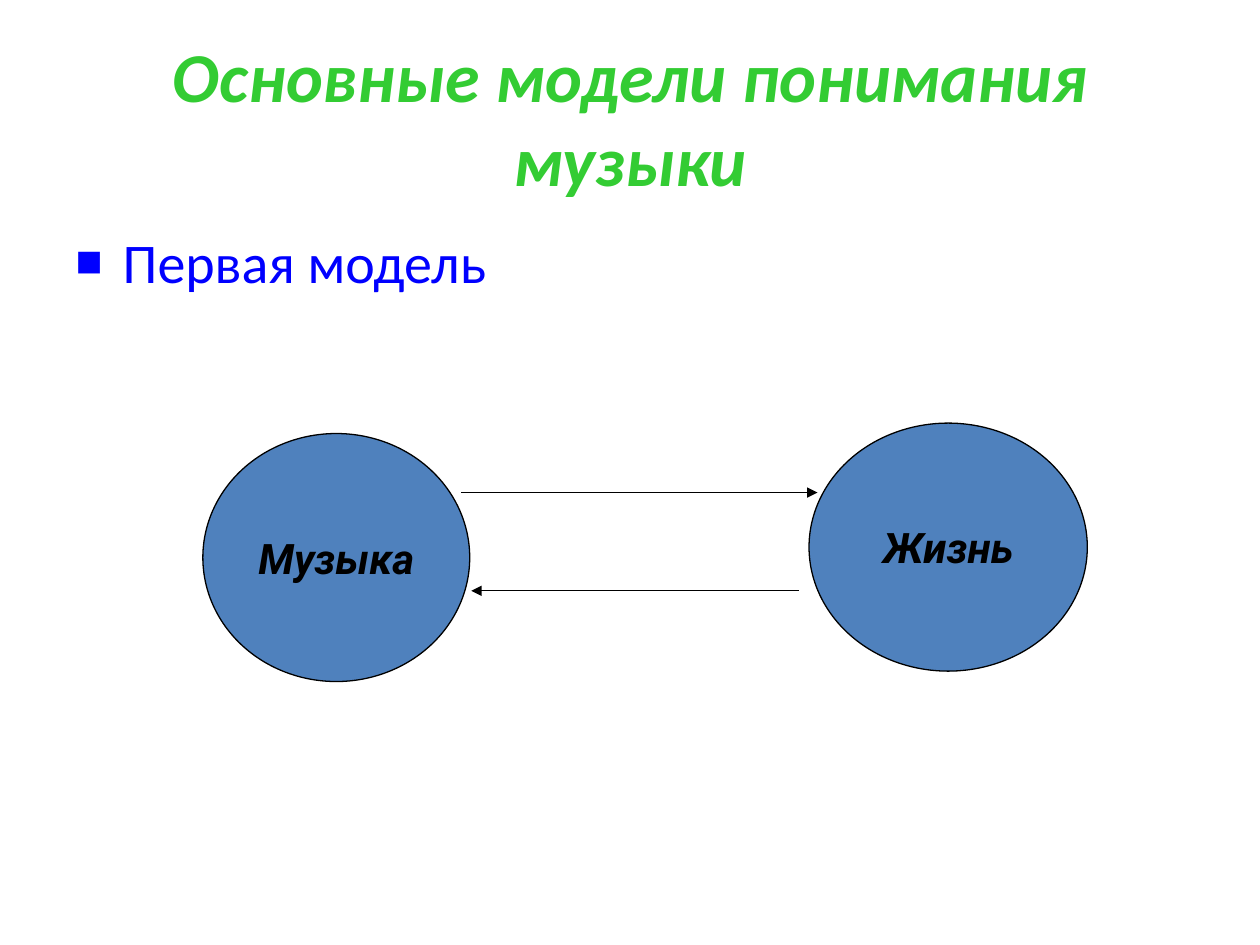
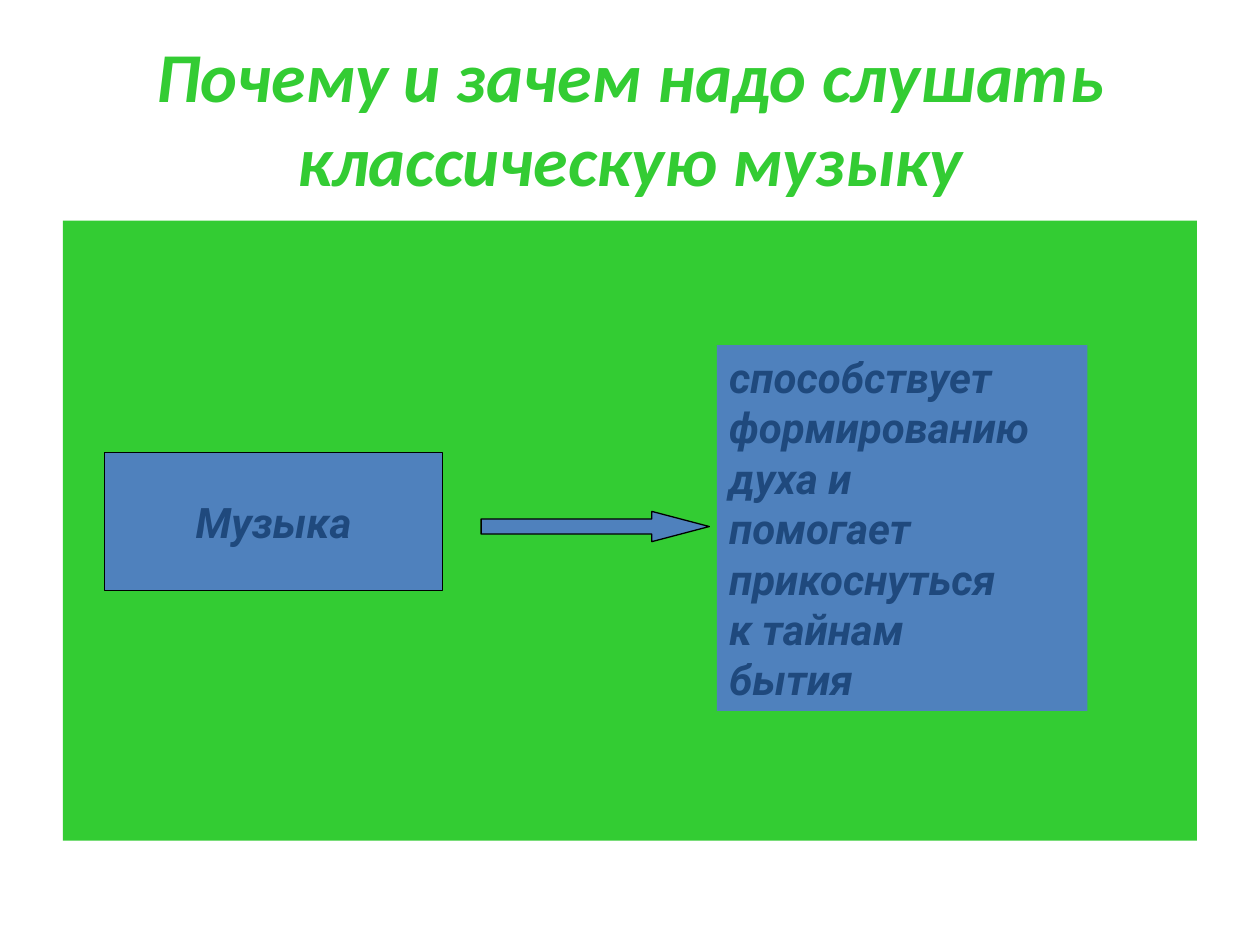
from dataclasses import dataclass

from lxml.etree import SubElement
from pptx import Presentation
from pptx.dml.color import RGBColor
from pptx.enum.shapes import MSO_CONNECTOR as CONN, MSO_SHAPE as SHAPE
from pptx.enum.text import MSO_ANCHOR as ANCHOR, MSO_AUTO_SIZE as AUTO, PP_ALIGN as ALIGN
from pptx.oxml.ns import qn
from pptx.util import Cm, Pt

COLORS = {"green": "33CC33", "blue": "0000FF", "steel": "4F81BD",
          "navy": "1F497D", "black": "000000"}
TITLE_FONT, LABEL_FONT = "Calibri", "Roboto"
TITLE_BOX = (1.27, 0.76, 22.86, 3.18)
BODY_BOX = (1.27, 4.45, 22.86, 12.5)


@dataclass
class Block:
    kind: SHAPE
    box: tuple[float, float, float, float]
    text: str = ""
    color: str = "black"
    fill: str = "steel"
    outlined: bool = True
    align: ALIGN = ALIGN.CENTER
    anchor: ANCHOR = ANCHOR.MIDDLE


@dataclass
class Arrow:
    x1: float
    x2: float
    y: float


def rgb(name: str) -> RGBColor:
    return RGBColor.from_string(COLORS[name])


def place(sp, box: tuple) -> None:
    sp.left, sp.top, sp.width, sp.height = map(Cm, box)


def write(tf, text: str, font: str, size: int, color: str, bold: bool = True,
          align: ALIGN = ALIGN.CENTER, anchor: ANCHOR = ANCHOR.MIDDLE) -> None:
    tf.text = text
    tf.word_wrap, tf.auto_size, tf.vertical_anchor = True, AUTO.NONE, anchor
    for p in tf.paragraphs:
        p.alignment = align
        for r in p.runs:
            f = r.font
            f.name, f.size, f.bold, f.italic = font, Pt(size), bold, bold
            f.color.rgb = rgb(color)


def add_titled_slide(prs, layout: int, title: str):
    s = prs.slides.add_slide(prs.slide_layouts[layout])
    place(s.shapes.title, TITLE_BOX)
    write(s.shapes.title.text_frame, title, TITLE_FONT, 40, "green")
    return s


def add_bullet(p, color: str) -> None:
    pPr = p._p.get_or_add_pPr()
    pPr.set("marL", str(Cm(0.95)))
    pPr.set("indent", str(-Cm(0.95)))
    SubElement(SubElement(pPr, qn("a:buClr")), qn("a:srgbClr"), val=COLORS[color])
    SubElement(pPr, qn("a:buSzPct"), val="80000")
    SubElement(pPr, qn("a:buChar"), char="■")


def add_block(s, b: Block):
    sp = s.shapes.add_shape(b.kind, *map(Cm, b.box))
    sp.shadow.inherit = False
    sp.fill.solid()
    sp.fill.fore_color.rgb = rgb(b.fill)
    if b.outlined:
        sp.line.color.rgb = rgb("black")
        sp.line.width = Pt(0.75)
    else:
        sp.line.fill.background()
    if b.text:
        write(sp.text_frame, b.text, LABEL_FONT, 24, b.color,
              align=b.align, anchor=b.anchor)
    return sp


def add_arrow(s, a: Arrow) -> None:
    c = s.shapes.add_connector(CONN.STRAIGHT, Cm(a.x1), Cm(a.y), Cm(a.x2), Cm(a.y))
    c.line.color.rgb = rgb("black")
    c.line.width = Pt(0.75)
    SubElement(c.line._get_or_add_ln(), qn("a:tailEnd"), type="triangle")
    SubElement(c._element.spPr, qn("a:effectLst"))


def build_model_slide(prs) -> None:
    s = add_titled_slide(prs, 1, "Основные модели понимания музыки")
    body = s.placeholders[1]
    place(body, BODY_BOX)
    write(body.text_frame, "Первая модель", TITLE_FONT, 32, "blue", bold=False,
          align=ALIGN.LEFT, anchor=ANCHOR.TOP)
    add_bullet(body.text_frame.paragraphs[0], "blue")

    # Two circles exchanging arrows
    for b in (Block(SHAPE.OVAL, (4.09, 8.74, 5.38, 5), "Музыка"),
              Block(SHAPE.OVAL, (16.31, 8.53, 5.61, 5), "Жизнь")):
        add_block(s, b)
    for a in (Arrow(9.3, 16.48, 9.93), Arrow(16.1, 9.5, 11.91)):
        add_arrow(s, a)


def build_reason_slide(prs) -> None:
    s = add_titled_slide(prs, 5, "Почему и зачем надо слушать классическую музыку")
    # Green panel, then cause, arrow and effect
    add_block(s, Block(SHAPE.RECTANGLE, BODY_BOX, fill="green", outlined=False))
    add_block(s, Block(SHAPE.RECTANGLE, (2.11, 9.12, 6.81, 2.79), "Музыка", "navy"))
    arrow = add_block(s, Block(SHAPE.RIGHT_ARROW, (9.7, 10.31, 4.6, 0.61)))
    arrow.adjustments[1] = 1.9
    effect = ("способствует\nформированию\nдуха и\nпомогает\n"
              "прикоснуться\nк тайнам\nбытия")
    add_block(s, Block(SHAPE.RECTANGLE, (14.45, 6.96, 7.47, 7.37), effect, "navy",
                       outlined=False, align=ALIGN.LEFT, anchor=ANCHOR.TOP))


def main() -> None:
    prs = Presentation()
    prs.slide_width, prs.slide_height = Cm(25.4), Cm(19.05)
    build_model_slide(prs)
    build_reason_slide(prs)
    prs.save("out.pptx")


if __name__ == "__main__":
    main()
